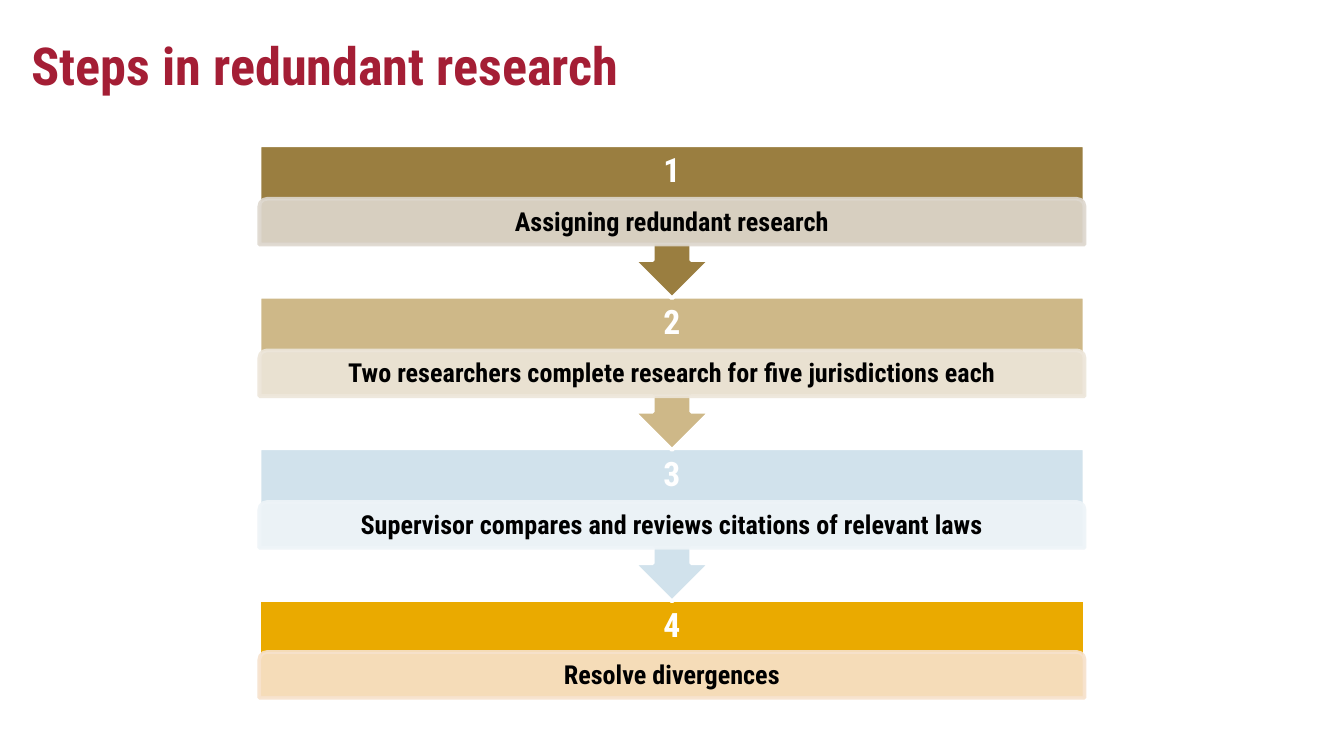
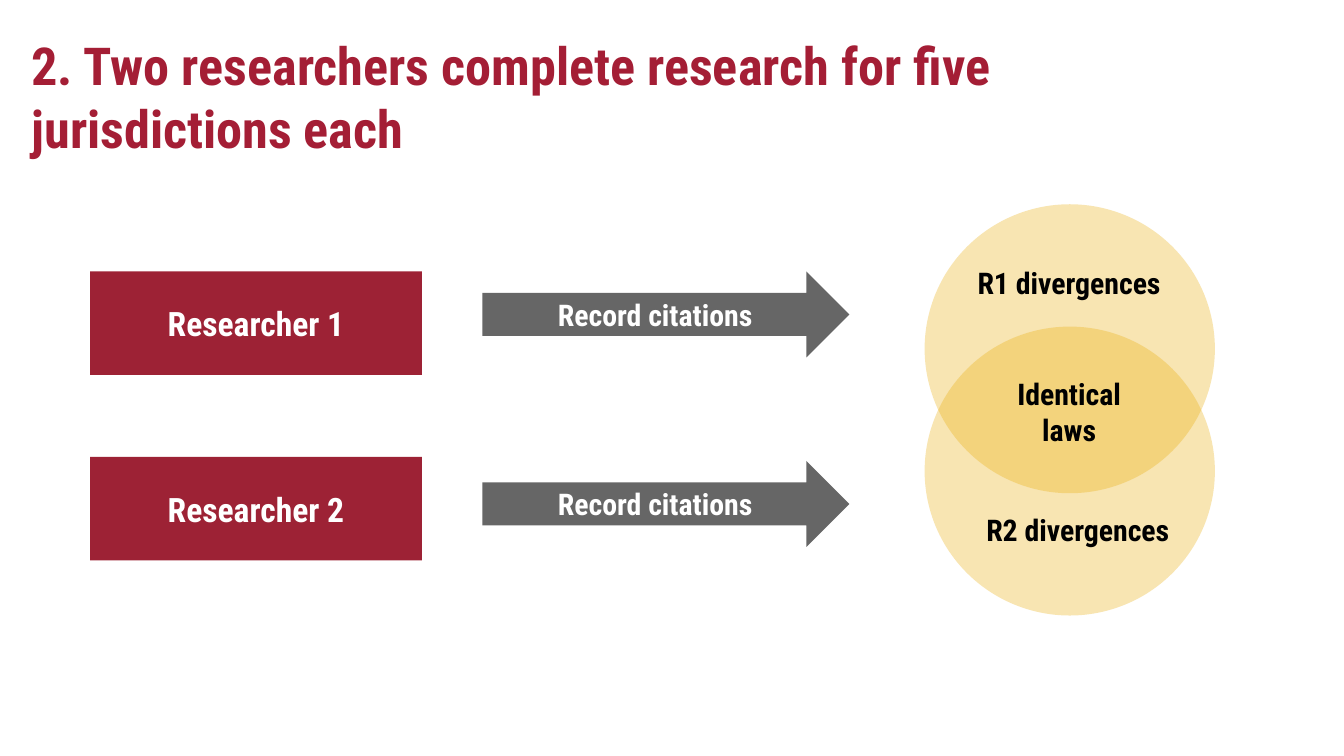
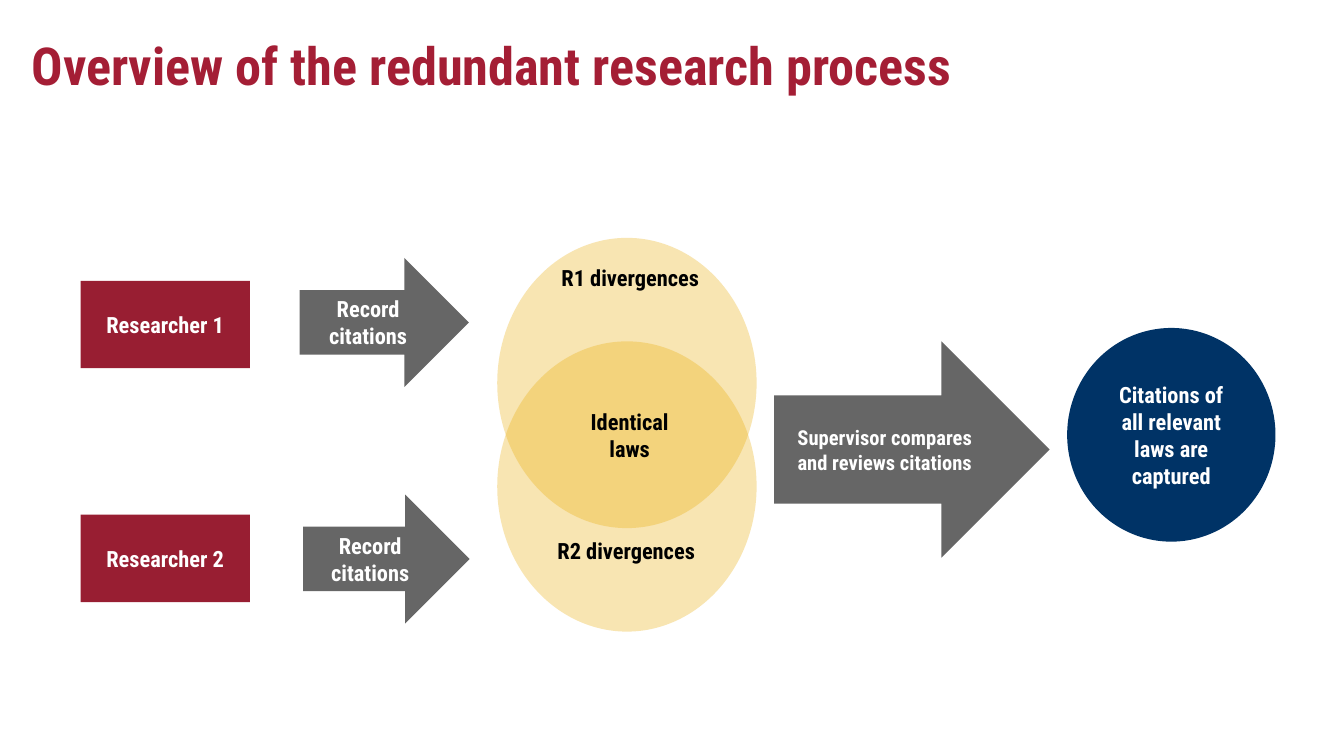
from lxml.etree import SubElement
from pptx import Presentation
from pptx.dml.color import RGBColor
from pptx.enum.shapes import MSO_SHAPE as Form
from pptx.enum.text import MSO_ANCHOR as Anchor, MSO_AUTO_SIZE as Fit, PP_ALIGN as Align
from pptx.oxml.ns import qn
from pptx.util import Inches, Pt

CELL = Inches(0.1)  # grid of 100 columns by 56.25 rows
FONT = "Roboto Condensed"
TITLE, GOLD, GREY, NAVY = "A41E35", "EAAA00", "666666", "003366"
WHITE, BLACK = "FFFFFF", "000000"


def draw(page, form, place, fill=None, line=None, alpha=None):
    """Add a shape, or a text box if form is None; place is in grid cells."""
    left, top, width, height = (int(n * CELL) for n in place)
    if form is None:
        return page.shapes.add_textbox(left, top, width, height)
    item = page.shapes.add_shape(form, left, top, width, height)
    item.shadow.inherit = False
    item.fill.solid()
    item.fill.fore_color.rgb = RGBColor.from_string(fill)
    if line:
        item.line.color.rgb = RGBColor.from_string(line)
        item.line.width = Pt(2)
    else:
        item.line.fill.background()
    if alpha:
        for tint in item.element.spPr.iter(qn("a:srgbClr")):
            SubElement(tint, qn("a:alpha"), val=str(alpha * 1000))
    return item


def write(item, text, size, color=WHITE, align=Align.CENTER,
          anchor=Anchor.MIDDLE, pad=(1, 0.5), space=None, fit=Fit.NONE):
    """Fill an item with one bold paragraph; pad is side and top inset in cells."""
    frame = item.text_frame
    frame.word_wrap = True
    frame.auto_size = fit
    frame.vertical_anchor = anchor
    frame.margin_left = frame.margin_right = int(pad[0] * CELL)
    frame.margin_top = frame.margin_bottom = int(pad[1] * CELL)
    para = frame.paragraphs[0]
    para.alignment = align
    para.line_spacing = space
    run = para.add_run()
    run.text = text
    run.font.name = FONT
    run.font.size = Pt(size)
    run.font.bold = True
    run.font.color.rgb = RGBColor.from_string(color)


deck = Presentation()
deck.slide_width, deck.slide_height = 100 * CELL, int(56.25 * CELL)

pages = []
for text in ("Steps in redundant research",
             "2. Two researchers complete research for five jurisdictions each",
             "Overview of the redundant research process"):
    page = deck.slides.add_slide(deck.slide_layouts[5])
    head = page.shapes.title
    head.left, head.top, head.width, head.height = (
        int(n * CELL) for n in (1.35, 1.5, 91.6, 6.3))
    write(head, text, 28, TITLE, Align.LEFT, Anchor.TOP, pad=(1, 1))
    pages.append(page)
steps, detail, whole = pages

# Steps: drawn from the last up, so each arrow lies over the next band
stages = [
    ("Assigning redundant research", "9A7E40", "DED8CF"),
    ("Two researchers complete research for five jurisdictions each", "CEB888", "EDE6DA"),
    ("Supervisor compares and reviews citations of relevant laws", "D1E2EC", "EEF4F8"),
    ("Resolve divergences", GOLD, "F7E2CC"),
]
left, width, pitch = 19.3, 61.4, 11.28
for count, (text, dark, pale) in reversed(list(enumerate(stages, 1))):
    top = 10.8 + (count - 1) * pitch
    drop = 4
    if count == len(stages):
        drop = 3.88
        draw(steps, Form.RECTANGLE, (left, top, width, 7.4), dark, WHITE)
    else:
        band = draw(steps, Form.UP_ARROW_CALLOUT, (left, top, width, 11.4), dark, WHITE)
        band.rotation = 180
    label = draw(steps, None, (left + 2, top, width - 4, 4))
    write(label, str(count), 18, pad=(1.4, 1.4), space=0.9)
    strip = draw(steps, Form.ROUND_2_SAME_RECTANGLE, (left, top + drop, width, 3.4),
                 pale, pale, alpha=90)
    write(strip, text, 14, BLACK, pad=(1.1, 0.2), space=0.9)

# Research flow: two researchers, their arrows and the overlapping results
flows = [
    dict(page=detail, red="9D2235", sizes=(18, 16),
         boxes=[(6.7, 20.2, 24.7, 7.7), (6.7, 34, 24.7, 7.7)],
         arrows=[(35.9, 20.2, 27.3, 6.4), (35.9, 34.3, 27.3, 6.4)],
         rings=[(68.8, 15.2, 21.6, 21.5), (68.8, 24.3, 21.6, 21.5)],
         notes=[(68, 19.2, 23.1, 3.7), (71, 37.6, 18.4, 3.7), (72.6, 27.5, 13.9, 6.4)]),
    dict(page=whole, red="981E32", sizes=(12, 12),
         boxes=[(6, 20.9, 12.6, 6.5), (6, 38.3, 12.6, 6.5)],
         arrows=[(22.3, 19.2, 12.6, 9.6), (22.55, 36.8, 12.4, 9.6)],
         rings=[(37, 17.7, 19.3, 21.6), (37, 25.4, 19.3, 21.6)],
         notes=[(40.6, 19.2, 12.6, 5), (40.1, 39.5, 13, 5), (41.9, 29.9, 9.9, 5)]),
]
for flow in flows:
    page = flow["page"]
    large, small = flow["sizes"]
    for count, place in enumerate(flow["boxes"], 1):
        write(draw(page, Form.RECTANGLE, place, flow["red"]), f"Researcher {count}", large)
    for place in flow["arrows"]:
        write(draw(page, Form.RIGHT_ARROW, place, GREY), "Record citations", small)
    for place in flow["rings"]:
        draw(page, Form.OVAL, place, GOLD, alpha=30)
    for text, place in zip(("R1 divergences", "R2 divergences", "Identical laws"),
                           flow["notes"]):
        write(draw(page, None, place), text, small, BLACK,
              anchor=Anchor.TOP, fit=Fit.SHAPE_TO_FIT_TEXT)

# Outcome of the whole process
review = draw(whole, Form.RIGHT_ARROW, (57.6, 25.4, 20.5, 16.1), GREY)
write(review, "Supervisor compares and reviews citations", 11)
result = draw(whole, Form.OVAL, (79.4, 24.4, 15.5, 15.9), NAVY)
write(result, "Citations of all relevant laws are captured", 12)

deck.save("out.pptx")
